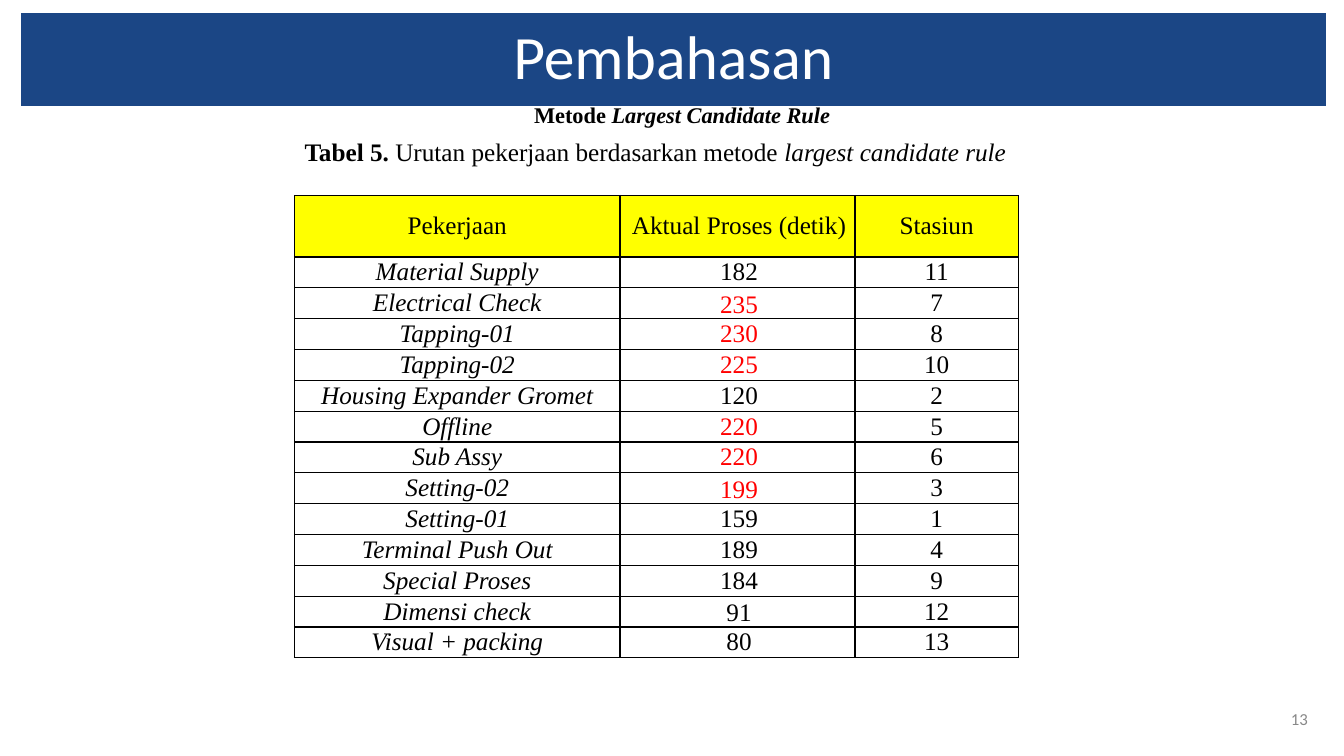
from lxml import etree
from pptx import Presentation
from pptx.dml.color import RGBColor
from pptx.enum.text import MSO_ANCHOR, MSO_AUTO_SIZE, PP_ALIGN
from pptx.oxml.ns import qn
from pptx.util import Inches, Pt

LEFT, CENTER, RIGHT = PP_ALIGN.LEFT, PP_ALIGN.CENTER, PP_ALIGN.RIGHT
TOP, MIDDLE, BOTTOM = MSO_ANCHOR.TOP, MSO_ANCHOR.MIDDLE, MSO_ANCHOR.BOTTOM
NO_AUTOFIT = MSO_AUTO_SIZE.NONE

BLUE = RGBColor(0x1B, 0x46, 0x85)
YELLOW = RGBColor(0xFF, 0xFF, 0x00)
RED = RGBColor(0xFF, 0x00, 0x00)
BLACK = RGBColor(0x00, 0x00, 0x00)
WHITE = RGBColor(0xFF, 0xFF, 0xFF)
GRAY = RGBColor(0x88, 0x88, 0x88)

HEADINGS = ("Pekerjaan", "Aktual Proses (detik)", "Stasiun")
JOBS = (
    ("Material Supply", 182, 11),
    ("Electrical Check", 235, 7),
    ("Tapping-01", 230, 8),
    ("Tapping-02", 225, 10),
    ("Housing Expander Gromet", 120, 2),
    ("Offline", 220, 5),
    ("Sub Assy", 220, 6),
    ("Setting-02", 199, 3),
    ("Setting-01", 159, 1),
    ("Terminal Push Out", 189, 4),
    ("Special Proses", 184, 9),
    ("Dimensi check", 91, 12),
    ("Visual + packing", 80, 13),
)
SLOW_SECONDS = 190
LOW_SET_TIMES = (235, 199, 91)
COLUMN_SHARES = (24.23, 17.48, 12.15)
HEADING_SHARE, JOB_SHARE = 8.13, 4.08


class Page:
    """Holds the slide and its style; lengths are percentages of the slide size."""

    serif, sans = "Times New Roman", "Calibri"

    def __init__(self, deck):
        self.wide, self.high = deck.slide_width, deck.slide_height
        self.slide = deck.slides.add_slide(deck.slide_layouts[1])

    def across(self, share):
        return round(self.wide * share / 100)

    def down(self, share):
        return round(self.high * share / 100)

    def box(self, left, top, width, height):
        return self.across(left), self.down(top), self.across(width), self.down(height)

    def set_line(self, paragraph, runs, size, color, font, align=CENTER, margin=0, indent=0):
        properties = paragraph._p.get_or_add_pPr()
        properties.set("marL", str(Inches(margin)))
        properties.set("indent", str(Inches(indent)))
        etree.SubElement(properties, qn("a:buNone"))
        paragraph.alignment = align
        paragraph.space_before = Pt(0)
        paragraph.font.size, paragraph.font.name = Pt(size), font
        paragraph.font.color.rgb = color
        for text, bold, italic in runs:
            run = paragraph.add_run()
            run.text = text
            run.font.bold, run.font.italic = bold, italic

    def fill_frame(self, holder, anchor, runs, size, color, font, spacing=0.9, **layout):
        frame = holder.text_frame
        frame.word_wrap, frame.auto_size = True, NO_AUTOFIT
        frame.vertical_anchor = anchor
        line = frame.paragraphs[0]
        self.set_line(line, runs, size, color, font, **layout)
        line.line_spacing = spacing

    def place(self, holder, area):
        holder.left, holder.top, holder.width, holder.height = self.box(*area)

    def title(self, text, area):
        banner = self.slide.shapes.title
        self.place(banner, area)
        banner.fill.solid()
        banner.fill.fore_color.rgb = BLUE
        self.fill_frame(banner, MIDDLE, [(text, False, False)], 44, WHITE, self.sans)

    def body(self, runs, area):
        caption = self.slide.placeholders[1]
        self.place(caption, area)
        self.fill_frame(caption, TOP, runs, 18, BLACK, self.serif, align=LEFT, margin=0.29)

    def label(self, runs, area, anchor, size, color, font, **layout):
        label = self.slide.shapes.add_textbox(*self.box(*area))
        self.fill_frame(label, anchor, runs, size, color, font, **layout)

    def border(self, cell):
        properties = cell._tc.get_or_add_tcPr()
        for position, side in enumerate(("a:lnL", "a:lnR", "a:lnT", "a:lnB")):
            edge = etree.Element(qn(side), w=str(Pt(1)))
            paint = etree.SubElement(edge, qn("a:solidFill"))
            etree.SubElement(paint, qn("a:srgbClr"), val=str(BLACK))
            properties.insert(position, edge)

    def cell(self, cell, value, column, heading):
        cell.margin_left = cell.margin_right = Inches(0.07)
        cell.margin_top = cell.margin_bottom = 0
        is_time = column == 1 and not heading
        low = is_time and value in LOW_SET_TIMES
        cell.vertical_anchor = BOTTOM if low else MIDDLE
        if heading:
            cell.fill.solid()
            cell.fill.fore_color.rgb = YELLOW
        else:
            cell.fill.background()
        self.border(cell)
        color = RED if is_time and value > SLOW_SECONDS else BLACK
        italic = column == 0 and not heading
        self.set_line(cell.text_frame.paragraphs[0], [(str(value), False, italic)], 18, color,
                      self.serif, indent=0.03 if column == 1 else 0)

    def table(self, left, top, rows):
        height = HEADING_SHARE + JOB_SHARE * (len(rows) - 1)
        area = self.box(left, top, sum(COLUMN_SHARES), height)
        table = self.slide.shapes.add_table(len(rows), len(COLUMN_SHARES), *area).table
        table.first_row = table.horz_banding = False
        for column, share in zip(table.columns, COLUMN_SHARES):
            column.width = self.across(share)
        for r, values in enumerate(rows):
            table.rows[r].height = self.down(JOB_SHARE if r else HEADING_SHARE)
            for c, value in enumerate(values):
                self.cell(table.cell(r, c), value, c, heading=r == 0)


def main():
    deck = Presentation()
    deck.slide_width, deck.slide_height = Inches(13.33), Inches(7.5)
    page = Page(deck)
    page.title("Pembahasan", (1.58, 1.73, 97.07, 12.27))
    page.body([("Tabel 5. ", True, False),
               ("Urutan pekerjaan berdasarkan metode ", False, False),
               ("largest candidate rule", False, True)], (19.73, 17.87, 75, 6.8))
    page.table(21.91, 25.87, (HEADINGS, *JOBS))
    page.label([("Metode ", True, False), ("Largest Candidate Rule", True, True)],
               (1.13, 13.07, 97.07, 7.73), TOP, 16, BLACK, page.serif, margin=0.29)
    page.label([("13", False, False)], (93.77, 92.4, 4.28, 5.33), MIDDLE, 12, GRAY,
               page.sans, spacing=1.0, align=RIGHT)
    deck.save("out.pptx")


if __name__ == "__main__":
    main()
